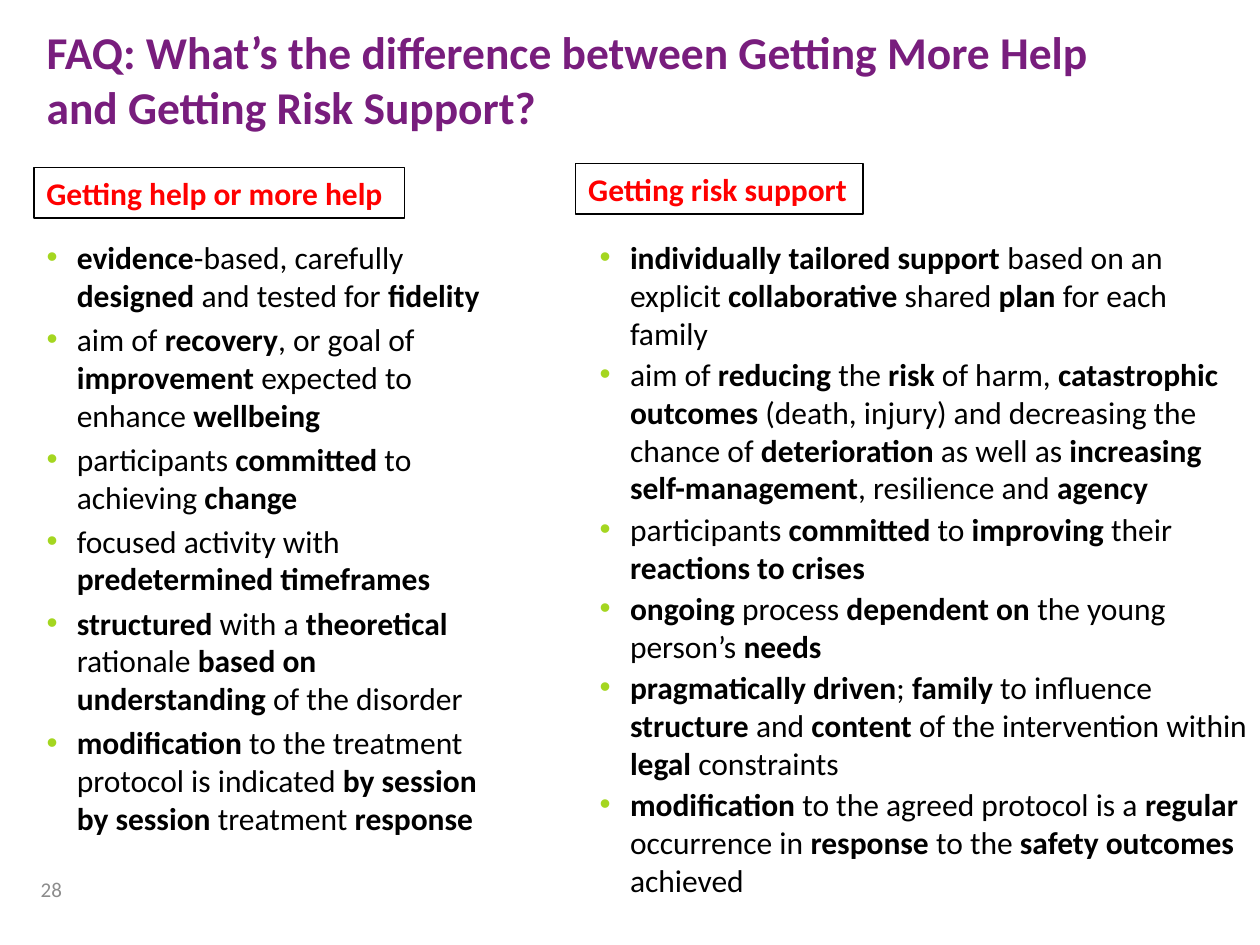
from dataclasses import dataclass

from lxml.etree import SubElement
from pptx import Presentation
from pptx.dml.color import RGBColor
from pptx.enum.shapes import MSO_SHAPE
from pptx.enum.text import MSO_ANCHOR, MSO_AUTO_SIZE, PP_ALIGN
from pptx.oxml.ns import qn
from pptx.util import Inches, Pt


@dataclass(frozen=True)
class Theme:
    font: str = "Calibri"
    title: str = "781D7D"
    heading: str = "FF0000"
    body: str = "000000"
    bullet: str = "A4D620"
    number: str = "8C8C8C"
    title_size: int = 26
    body_size: int = 18
    number_size: int = 12
    outline: float = 0.75


THEME = Theme()
SLIDE_WIDTH, SLIDE_HEIGHT = Inches(10), Inches(7.5)
CELL = SLIDE_WIDTH // 100  # grid of 100 columns by 75 rows
BULLET_MARGIN, BULLET_HANG = 3.8, 2.4  # in columns

TITLE = "FAQ: What’s the difference between Getting More Help and Getting Risk Support?"

# Words between double asterisks are bold
HELP_POINTS = [
    "**evidence**-based, carefully **designed** and tested for **fidelity**",
    "aim of **recovery**, or goal of **improvement** expected to enhance **wellbeing**",
    "participants **committed** to achieving **change**",
    "focused activity with **predetermined timeframes**",
    "**structured** with a **theoretical** rationale **based on understanding** of the disorder",
    "**modification** to the treatment protocol is indicated **by session by session** "
    "treatment **response**",
]
RISK_POINTS = [
    "**individually tailored support** based on an explicit **collaborative** shared "
    "**plan** for each family",
    "aim of **reducing** the **risk** of harm, **catastrophic outcomes** (death, injury) "
    "and decreasing the chance of **deterioration** as well as "
    "**increasing self-management**, resilience and **agency**",
    "participants **committed** to **improving** their **reactions to crises**",
    "**ongoing** process **dependent on** the young person’s **needs**",
    "**pragmatically driven**; **family** to influence **structure** and **content** "
    "of the intervention within **legal** constraints",
    "**modification** to the agreed protocol is a **regular** occurrence in **response** "
    "to the **safety outcomes** achieved",
]


def cells(*counts):
    return [round(count * CELL) for count in counts]


def place(part, box):
    part.left, part.top, part.width, part.height = cells(*box)


def style(font, size, color, bold=False):
    font.name = THEME.font
    font.size = Pt(size)
    font.bold = bold
    font.color.rgb = RGBColor.from_string(color)


def write_line(frame, text, align, size, color, bold=False):
    paragraph = frame.paragraphs[0]
    paragraph.text = text
    paragraph.alignment = align
    paragraph.space_before = Pt(0)
    style(paragraph.runs[0].font, size, color, bold)


def add_bullet(paragraph):
    properties = paragraph._p.get_or_add_pPr()
    margin, hang = cells(BULLET_MARGIN, BULLET_HANG)
    properties.set("marL", str(margin))
    properties.set("indent", str(-hang))
    color = SubElement(properties, qn("a:buClr"))
    SubElement(color, qn("a:srgbClr"), val=THEME.bullet)
    SubElement(properties, qn("a:buFont"), typeface="Arial")
    SubElement(properties, qn("a:buChar"), char="•")


def fill_title(title, box):
    place(title, box)
    frame = title.text_frame
    frame.auto_size = MSO_AUTO_SIZE.NONE
    frame.vertical_anchor = MSO_ANCHOR.TOP
    write_line(frame, TITLE, PP_ALIGN.LEFT, THEME.title_size, THEME.title, True)


def add_heading(slide, box, text):
    heading = slide.shapes.add_shape(MSO_SHAPE.RECTANGLE, *cells(*box))
    heading.shadow.inherit = False
    heading.fill.background()
    heading.line.color.rgb = RGBColor.from_string(THEME.body)
    heading.line.width = Pt(THEME.outline)
    frame = heading.text_frame
    frame.word_wrap = False
    frame.auto_size = MSO_AUTO_SIZE.SHAPE_TO_FIT_TEXT
    frame.vertical_anchor = MSO_ANCHOR.TOP
    write_line(frame, text, PP_ALIGN.LEFT, THEME.body_size, THEME.heading, True)


def fill_points(points_list, box, points, gap):
    place(points_list, box)
    frame = points_list.text_frame
    frame.auto_size = MSO_AUTO_SIZE.NONE
    for index, point in enumerate(points):
        paragraph = frame.add_paragraph() if index else frame.paragraphs[0]
        paragraph.space_before = Pt(gap if index else 0)
        add_bullet(paragraph)
        for position, words in enumerate(point.split("**")):
            if words:
                run = paragraph.add_run()
                run.text = words
                style(run.font, THEME.body_size, THEME.body, position % 2 == 1)


def add_page_number(slide, box, number):
    frame = slide.shapes.add_textbox(*cells(*box)).text_frame
    frame.word_wrap = True
    frame.vertical_anchor = MSO_ANCHOR.MIDDLE
    write_line(frame, number, PP_ALIGN.RIGHT, THEME.number_size, THEME.number)


def main():
    deck = Presentation()
    deck.slide_width, deck.slide_height = SLIDE_WIDTH, SLIDE_HEIGHT
    slide = deck.slides.add_slide(deck.slide_layouts.get_by_name("Two Content"))
    title, help_list, risk_list = slide.placeholders

    fill_title(title, (2.7, 1.4, 88.5, 11.4))

    # Left column: help
    add_heading(slide, (2.7, 13.3, 29.4, 4), "Getting help or more help")
    fill_points(help_list, (1.3, 18.4, 39.9, 48.9), HELP_POINTS, gap=3.6)

    # Right column: risk support
    add_heading(slide, (45.7, 13, 22.8, 4), "Getting risk support")
    fill_points(risk_list, (45.2, 18.4, 54.8, 52), RISK_POINTS, gap=2)

    add_page_number(slide, (1.2, 68.6, 4.7, 4), "28")
    deck.save("out.pptx")


if __name__ == "__main__":
    main()
